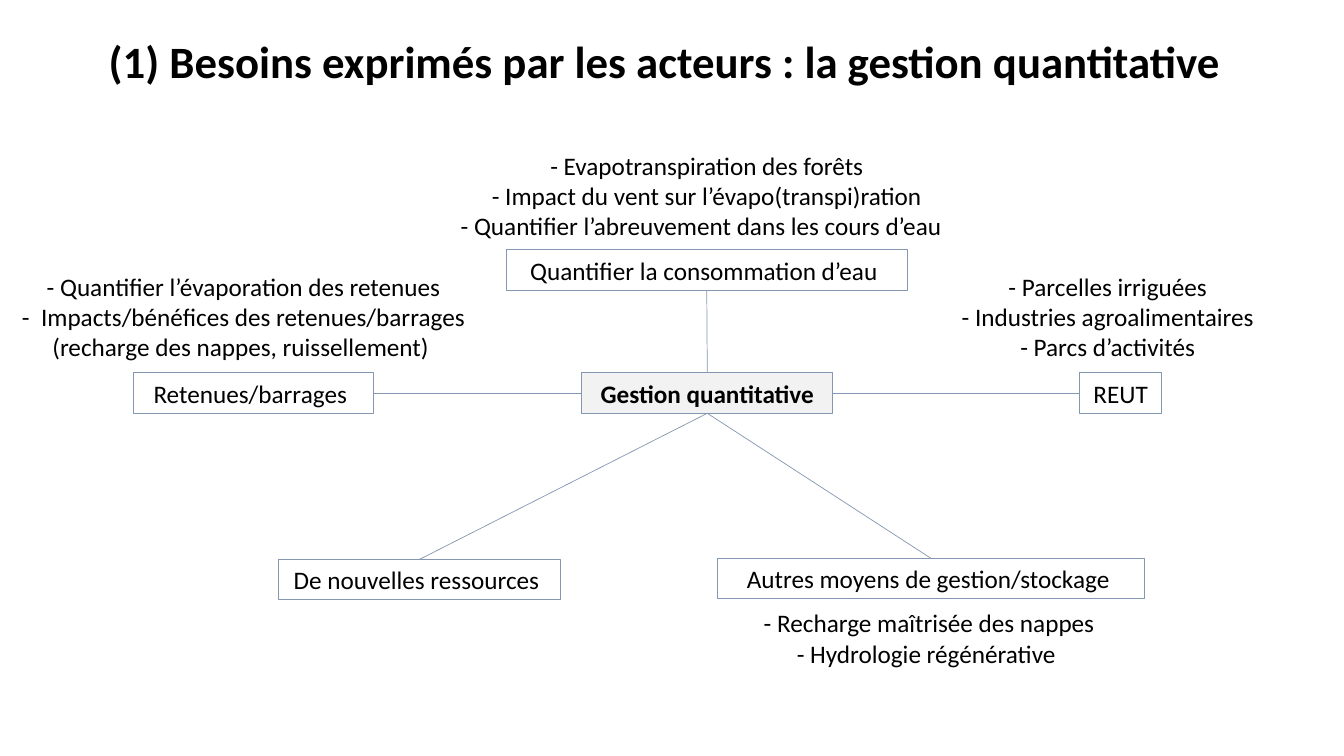
"""Build the slide on the quantitative water management needs."""
from lxml.etree import SubElement
from pptx import Presentation
from pptx.dml.color import RGBColor
from pptx.enum.shapes import MSO_CONNECTOR, MSO_SHAPE
from pptx.enum.text import MSO_ANCHOR, MSO_AUTO_SIZE, PP_ALIGN
from pptx.oxml.ns import qn
from pptx.util import Inches, Pt

COLOURS = {"text": "000000", "line": "8497B0", "hub": "F2F2F2"}
TOP, LEFT, BOTTOM, RIGHT = range(4)
BOX_HEIGHT = 0.4
HUB = ("Gestion quantitative", 5.77, 3.7, 2.49)
TOPICS = [
    ("Quantifier la consommation d’eau ", 5.02, 2.48, 3.98, BOTTOM, TOP),
    ("Retenues/barrages ", 1.32, 3.7, 2.38, RIGHT, LEFT),
    ("REUT", 10.71, 3.7, 0.81, LEFT, RIGHT),
    ("Autres moyens de gestion/stockage ", 7.12, 5.54, 4.23, TOP, BOTTOM),
    ("De nouvelles ressources ", 2.76, 5.55, 2.8, TOP, BOTTOM),
]
NOTES = [
    ((0.02, 2.64, 4.79, 1.01), [
        "- Quantifier l’évaporation des retenues",
        "-  Impacts/bénéfices des retenues/barrages (recharge des nappes, ruissellement) ",
    ]),
    ((9.23, 2.64, 3.57, 1.01), [
        "- Parcelles irriguées ",
        "- Industries agroalimentaires ",
        "- Parcs d’activités ",
    ]),
    ((4.35, 1.44, 5.32, 1.01), [
        "- Evapotranspiration des forêts",
        "- Impact du vent sur l’évapo(transpi)ration",
        "- Quantifier l’abreuvement dans les cours d’eau  ",
    ]),
    ((7.1, 5.98, 4.23, 0.71), [
        "- Recharge maîtrisée des nappes",
        "- Hydrologie régénérative ",
    ]),
]


def colour(name):
    """Return the named colour."""
    return RGBColor.from_string(COLOURS[name])


def set_attributes(target, values):
    """Set each format value on the target."""
    for name, value in values.items():
        setattr(target, name, value)


def write_text(shape, lines, size=18, bold=False):
    """Write centred paragraphs into a shape."""
    frame = shape.text_frame
    frame.text = "\n".join(lines)
    set_attributes(frame, {"word_wrap": True, "vertical_anchor": MSO_ANCHOR.TOP,
                           "auto_size": MSO_AUTO_SIZE.SHAPE_TO_FIT_TEXT})
    for paragraph in frame.paragraphs:
        set_attributes(paragraph, {"alignment": PP_ALIGN.CENTER, "line_spacing": 1.0})
        set_attributes(paragraph.font, {"name": "Calibri", "size": Pt(size), "bold": bold})
        paragraph.font.color.rgb = colour("text")


def add_title(slide, text):
    """Place and fill the title."""
    title = slide.shapes.title
    set_attributes(title, {"left": Inches(-0.07), "top": Inches(0.28),
                           "width": Inches(13.33), "height": Inches(0.64)})
    write_text(title, [text], size=32, bold=True)


def add_box(slide, text, left, top, width, fill=None):
    """Add an outlined box; a filled one has bold text."""
    box = slide.shapes.add_shape(MSO_SHAPE.RECTANGLE, *map(Inches, (left, top, width, BOX_HEIGHT)))
    box.shadow.inherit = False
    if fill:
        box.fill.solid()
        box.fill.fore_color.rgb = colour(fill)
    else:
        box.fill.background()
    box.line.color.rgb = colour("line")
    box.line.width = Pt(0.75)
    write_text(box, [text], bold=bool(fill))
    return box


def add_link(slide, box, box_side, hub, hub_side):
    """Join a side of a topic box to a side of the hub."""
    link = slide.shapes.add_connector(MSO_CONNECTOR.STRAIGHT, 0, 0, 0, 0)
    link.begin_connect(box, box_side)
    link.end_connect(hub, hub_side)
    link.line.color.rgb = colour("line")
    link.line.width = Pt(0.5)
    SubElement(link._element.spPr, qn("a:effectLst"))


def add_note(slide, place, lines):
    """Add a free text list."""
    write_text(slide.shapes.add_textbox(*map(Inches, place)), lines)


def main():
    """Build and save the slide."""
    presentation = Presentation()
    set_attributes(presentation, {"slide_width": Inches(13.33), "slide_height": Inches(7.5)})
    slide = presentation.slides.add_slide(presentation.slide_layouts[5])
    add_title(slide, "(1) Besoins exprimés par les acteurs : la gestion quantitative")
    hub = add_box(slide, *HUB, fill="hub")
    for text, left, top, width, box_side, hub_side in TOPICS:
        box = add_box(slide, text, left, top, width)
        add_link(slide, box, box_side, hub, hub_side)
    for place, lines in NOTES:
        add_note(slide, place, lines)
    presentation.save("out.pptx")


if __name__ == "__main__":
    main()
